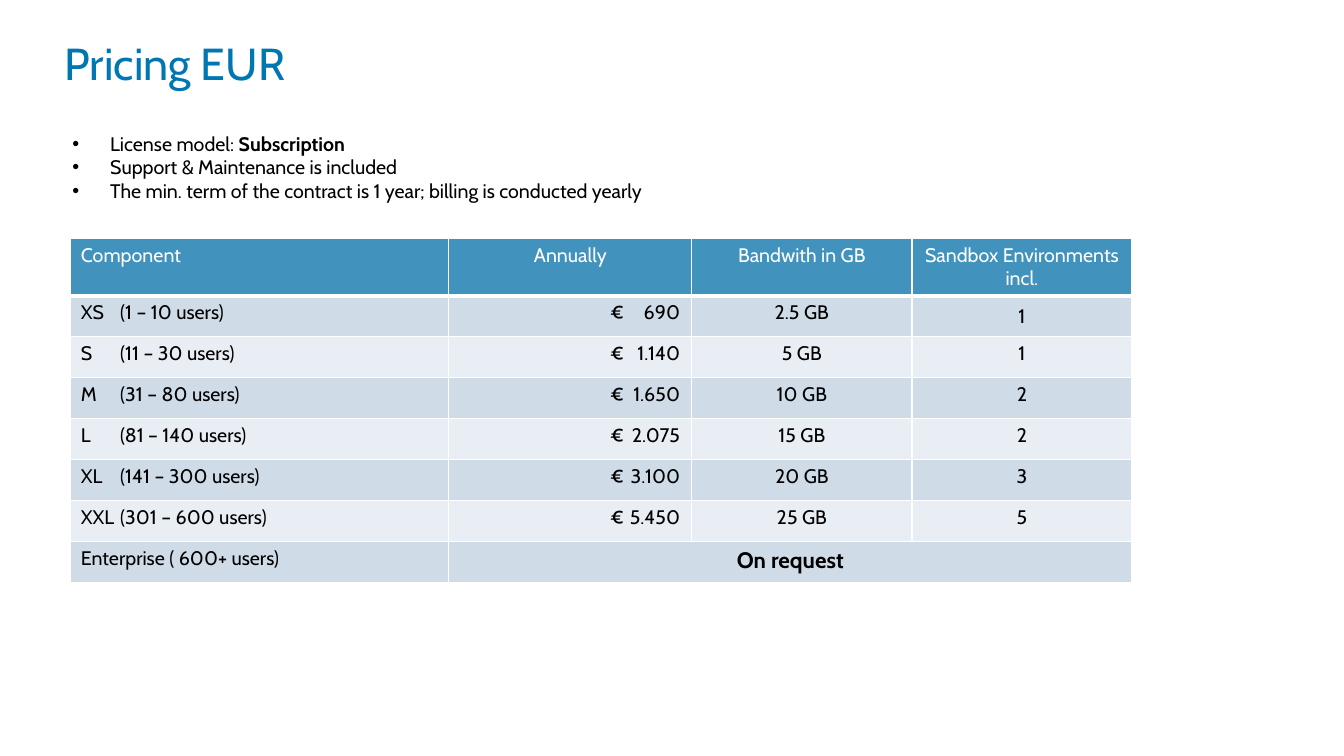
from lxml import etree
from pptx import Presentation
from pptx.dml.color import RGBColor
from pptx.enum.text import MSO_ANCHOR, PP_ALIGN
from pptx.oxml.ns import qn
from pptx.util import Pt

LEFT, MID, RIGHT = PP_ALIGN.LEFT, PP_ALIGN.CENTER, PP_ALIGN.RIGHT
CENTER = MSO_ANCHOR.MIDDLE
BLUE = RGBColor(0x00, 0x77, 0xB3)
HEAD = RGBColor(0x41, 0x92, 0xBD)
DARK = RGBColor(0xCF, 0xDC, 0xE8)
PALE = RGBColor(0xE9, 0xEE, 0xF4)
BLACK = RGBColor(0, 0, 0)
WHITE = RGBColor(255, 255, 255)
FONT = "Cabin"

TITLE = "Pricing EUR"
TERMS = [
    [("License model: ", False), ("Subscription", True)],
    [("Support & Maintenance is included", False)],
    [("The min. term of the contract is 1 year; billing is conducted yearly", False)],
]
HEADS = ["Component", "Annually", "Bandwith in GB", "Sandbox Environments incl."]
PLANS = [
    ("XS", "(1 – 10 users)", "690", "2.5 GB", "1"),
    ("S", "(11 – 30 users)", "1.140", "5 GB", "1"),
    ("M", "(31 – 80 users)", "1.650", "10 GB", "2"),
    ("L", "(81 – 140 users)", "2.075", "15 GB", "2"),
    ("XL", "(141 – 300 users)", "3.100", "20 GB", "3"),
    ("XXL", "(301 – 600 users)", "5.450", "25 GB", "5"),
]
LAST = ["Enterprise ( 600+ users)", "On request", "", ""]
WIDTHS = [270, 173.6, 157.2, 157.2]
HEAD_H, ROW_H = 41.2, 29.3
SIZE_TABS = [(28, "l")]
PRICE_TABS = [(108, "l"), (158, "r")]


def style(para, size, color, bold=None):
    font = para.font
    font.name, font.size, font.bold = FONT, Pt(size), bold
    font.color.rgb = color


def add_box(slide, x, y, w, h):
    frame = slide.shapes.add_textbox(Pt(x), Pt(y), Pt(w), Pt(h)).text_frame
    frame.word_wrap = True
    return frame


def add_tabs(para, stops):
    tabs = etree.SubElement(para._p.get_or_add_pPr(), qn("a:tabLst"))
    for pos, algn in stops:
        etree.SubElement(tabs, qn("a:tab"), pos=str(Pt(pos)), algn=algn)


def add_edges(cell, foot):
    props = cell._tc.get_or_add_tcPr()
    for i, side in enumerate("LRTB"):
        width = foot if side == "B" else 1
        line = etree.Element(qn("a:ln" + side), w=str(Pt(width)))
        fill = etree.SubElement(line, qn("a:solidFill"))
        etree.SubElement(fill, qn("a:srgbClr"), val=str(WHITE))
        props.insert(i, line)


def fill_cell(cell, text, align, fill, color, size=14, bold=None, tabs=(), foot=1):
    cell.fill.solid()
    cell.fill.fore_color.rgb = fill
    add_edges(cell, foot)
    para = cell.text_frame.paragraphs[0]
    para.alignment = align
    if tabs:
        add_tabs(para, tabs)
    para.add_run().text = text
    style(para, size, color, bold)


def add_title(slide):
    para = add_box(slide, 39, 26, 882, 43).paragraphs[0]
    para.text = TITLE
    para.line_spacing = 0.9
    style(para, 32, BLUE)


def add_terms(slide):
    frame = add_box(slide, 44.6, 90.5, 566, 58)
    for i, runs in enumerate(TERMS):
        para = frame.add_paragraph() if i else frame.paragraphs[0]
        props = para._p.get_or_add_pPr()
        props.set("marL", str(Pt(27)))
        props.set("indent", str(Pt(-27)))
        etree.SubElement(props, qn("a:buFont"), typeface="Arial")
        etree.SubElement(props, qn("a:buChar"), char="•")
        for text, bold in runs:
            run = para.add_run()
            run.text = text
            run.font.bold = bold
        style(para, 14, BLACK)


def add_prices(slide):
    count = len(PLANS) + 2
    high = HEAD_H + ROW_H * (count - 1)
    table = slide.shapes.add_table(
        count, len(WIDTHS), Pt(50.6), Pt(170), Pt(sum(WIDTHS)), Pt(high)
    ).table
    for col, width in zip(table.columns, WIDTHS):
        col.width = Pt(width)
    for r, row in enumerate(table.rows):
        row.height = Pt(ROW_H if r else HEAD_H)
    for c, text in enumerate(HEADS):
        fill_cell(table.cell(0, c), text, MID if c else LEFT, HEAD, WHITE, foot=3)
    for r, (name, users, price, band, boxes) in enumerate(PLANS, 1):
        fill = DARK if r % 2 else PALE
        texts = [
            (f"{name}\t{users}", LEFT, SIZE_TABS),
            (f"\t€\t{price}", LEFT, PRICE_TABS),
            (band, MID, ()),
            (boxes, MID, ()),
        ]
        for c, (text, align, tabs) in enumerate(texts):
            fill_cell(table.cell(r, c), text, align, fill, BLACK, tabs=tabs)
    end = count - 1
    for c, text in enumerate(LAST):
        size, bold = (16, True) if c else (14, None)
        fill_cell(table.cell(end, c), text, MID if c else LEFT, DARK, BLACK, size, bold)
    table.cell(end, 1).merge(table.cell(end, 3))
    for r in (0, 1):
        table.cell(r, 3).vertical_anchor = CENTER


def main():
    deck = Presentation()
    deck.slide_width, deck.slide_height = Pt(960), Pt(540)
    slide = deck.slides.add_slide(deck.slide_layouts[6])
    add_title(slide)
    add_terms(slide)
    add_prices(slide)
    deck.save("out.pptx")


if __name__ == "__main__":
    main()
